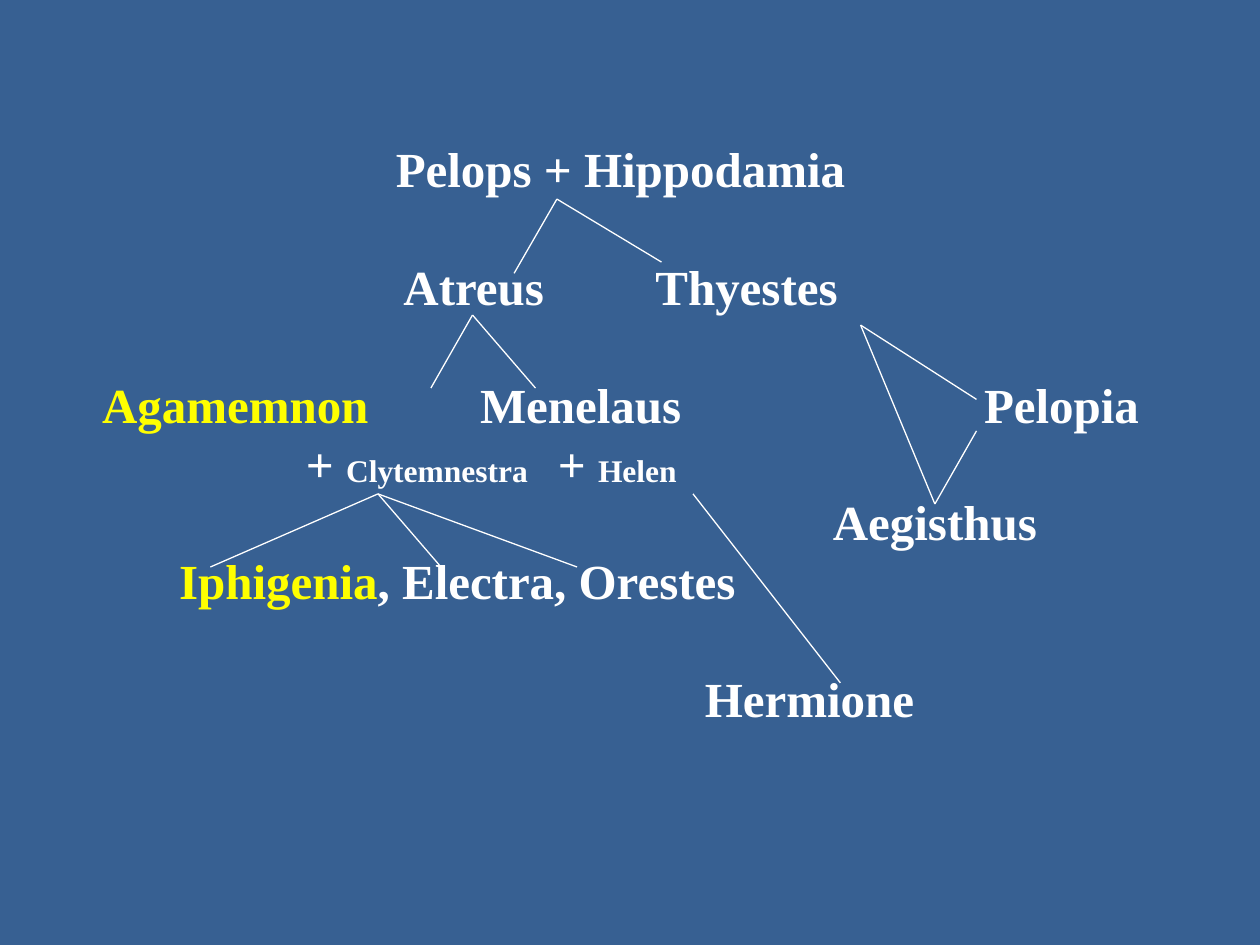
import pptx
import pptx.util
import pptx.dml.color
import pptx.enum.shapes
import pptx.enum.text
import pptx.oxml.ns
from lxml import etree

Inches, Pt = pptx.util.Inches, pptx.util.Pt
RGB = pptx.dml.color.RGBColor.from_string

THEME = {
    "font": "Times New Roman", "background": "376092",
    "white": "FFFFFF", "yellow": "FFFF00",
    "name": 28, "spouse": 18, "pitch": 33.65, "line": 0.75,
}
TAB_STEP = 1

# Each row: generations skipped above it, left margin, right margin, spans.
# Each span: text, colour, size.
ROWS = [
    (0, 0, 0, [("Pelops + Hippodamia", "white", "name")]),
    (1, 0, 0, [("Atreus\tThyestes", "white", "name")]),
    (1, 0, 0, [("Agamemnon", "yellow", "name"),
               ("\tMenelaus\t\t\tPelopia", "white", "name")]),
    (0, 0, 2.05, [("+ ", "white", "name"), ("Clytemnestra", "white", "spouse"),
                  ("\t+ ", "white", "name"), ("Helen", "white", "spouse")]),
    (0, 4.99, 0, [("Aegisthus", "white", "name")]),
    (0, 0, 2.59, [("Iphigenia", "yellow", "name"),
                  (", Electra, Orestes", "white", "name")]),
    (1, 3, 0, [("Hermione", "white", "name")]),
]

# Each branch: the parent's point, then the points of the children.
BRANCHES = [
    ((4.42, 1.58), [(4.08, 2.17), (5.25, 2.08)]),           # Pelops
    ((3.75, 2.5), [(3.42, 3.08), (4.25, 3.08)]),            # Atreus
    ((6.83, 2.58), [(7.75, 3.17), (7.42, 4)]),              # Thyestes
    ((7.75, 3.42), [(7.42, 4)]),                            # Pelopia
    ((3, 3.92), [(1.67, 4.5), (3.5, 4.5), (4.58, 4.5)]),    # Clytemnestra
    ((5.5, 3.92), [(6.67, 5.42)]),                          # Helen
]


def add_family(page):
    box = page.shapes.add_textbox(Inches(0.71), Inches(0.58), Inches(8.43), Inches(5.24))
    frame = box.text_frame
    frame.word_wrap = True
    frame.margin_left = frame.margin_right = frame.margin_bottom = 0
    frame.margin_top = Inches(0.52)
    for index, (skipped, left, right, spans) in enumerate(ROWS):
        para = frame.add_paragraph() if index else frame.paragraphs[0]
        para.alignment = pptx.enum.text.PP_ALIGN.CENTER
        para.line_spacing = Pt(THEME["pitch"])
        para.space_before = Pt(skipped * THEME["pitch"])
        para.font.name, para.font.bold = THEME["font"], True
        layout = para._p.get_or_add_pPr()
        for key, length in (("marL", left), ("marR", right), ("defTabSz", TAB_STEP)):
            layout.set(key, str(Inches(length)))
        for text, colour, size in spans:
            span = para.add_run()
            span.text = text
            span.font.name, span.font.bold = THEME["font"], True
            span.font.size = Pt(THEME[size])
            span.font.color.rgb = RGB(THEME[colour])


def add_branch(page, parent, child):
    line = page.shapes.add_connector(
        pptx.enum.shapes.MSO_CONNECTOR.STRAIGHT,
        *(Inches(value) for value in parent + child))
    line.line.color.rgb = RGB(THEME["white"])
    line.line.width = Pt(THEME["line"])
    etree.SubElement(line._element.spPr, pptx.oxml.ns.qn("a:effectLst"))


def main():
    deck = pptx.Presentation()
    deck.slide_width, deck.slide_height = Inches(10), Inches(7.5)
    page = deck.slides.add_slide(deck.slide_layouts[6])
    page.background.fill.solid()
    page.background.fill.fore_color.rgb = RGB(THEME["background"])

    # Names, one row of the tree to a paragraph
    add_family(page)

    # Lines of descent
    for parent, children in BRANCHES:
        for child in children:
            add_branch(page, parent, child)

    deck.save("out.pptx")


if __name__ == "__main__":
    main()
